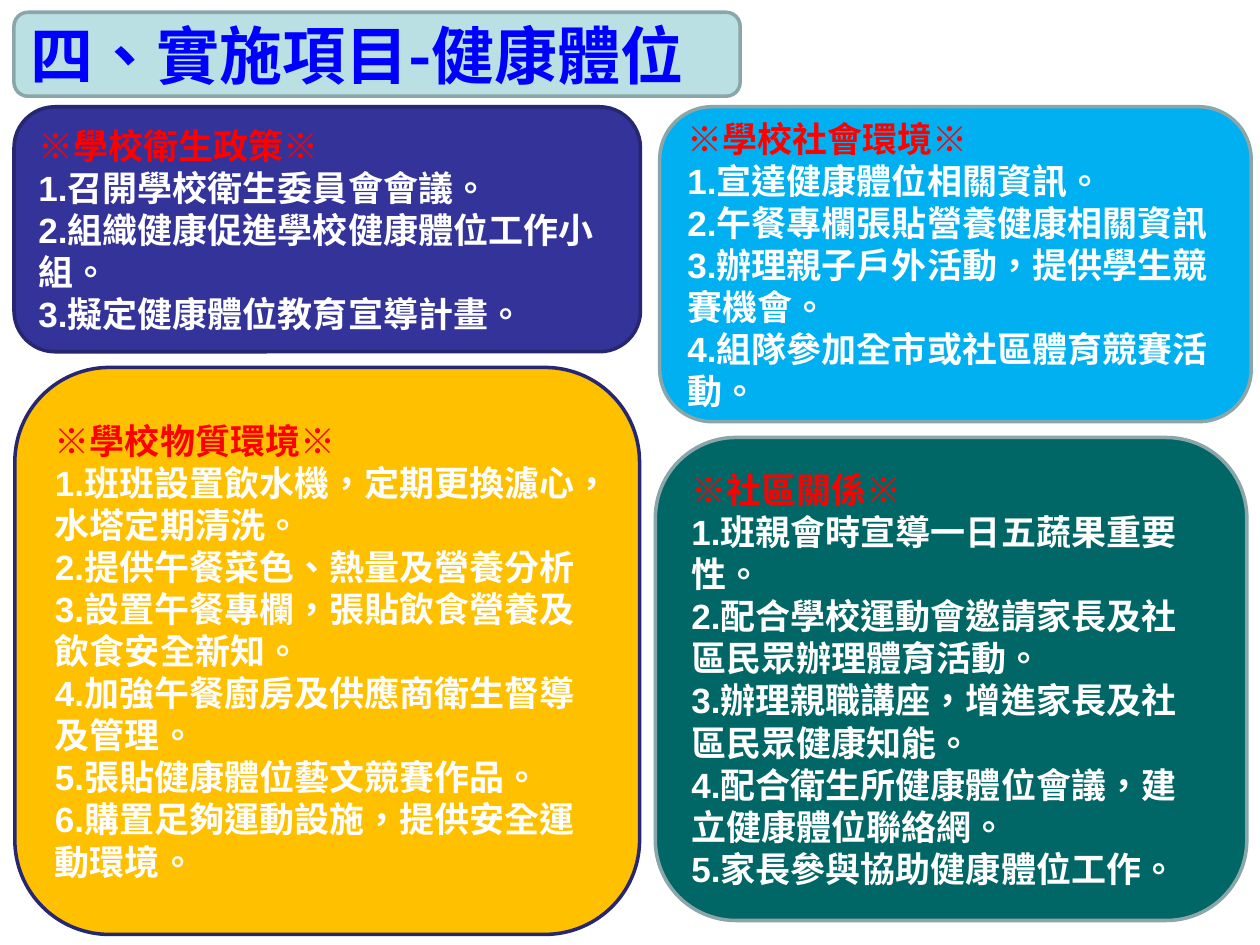
from lxml import etree
from pptx import Presentation
from pptx.dml.color import RGBColor
from pptx.enum import lang, shapes, text
from pptx.oxml import ns
from pptx.util import Pt

COLORS = {
    "title_fill": "BBE0E3", "title_text": "0000FF",
    "policy": "333399", "material": "FFC000",
    "social": "00B0F0", "community": "006666",
    "gray_line": "8AA6A8", "navy_line": "262671",
    "heading": "FF0000", "body": "FFFFFF",
}
TITLE_FONT, MARK_FONT, BODY_FONT = "Noto Sans CJK SC", "Noto Sans CJK TC", "Arial"

# Box in points, fill, line, heading, items
PANELS = [
    ((8, 61, 358, 140), "policy", "navy_line", "學校衛生政策", [
        "召開學校衛生委員會會議。",
        "組織健康促進學校健康體位工作小組。",
        "擬定健康體位教育宣導計畫。"]),
    ((8.5, 210, 357, 324), "material", "navy_line", "學校物質環境", [
        "班班設置飲水機，定期更換濾心，水塔定期清洗。",
        "提供午餐菜色、熱量及營養分析",
        "設置午餐專欄，張貼飲食營養及飲食安全新知。",
        "加強午餐廚房及供應商衛生督導及管理。",
        "張貼健康體位藝文競賽作品。",
        "購置足夠運動設施，提供安全運動環境。"]),
    ((377, 61, 338, 180), "social", "gray_line", "學校社會環境", [
        "宣達健康體位相關資訊。",
        "午餐專欄張貼營養健康相關資訊",
        "辦理親子戶外活動，提供學生競賽機會。",
        "組隊參加全市或社區體育競賽活動。"]),
    ((374.5, 250, 338, 276), "community", "gray_line", "社區關係", [
        "班親會時宣導一日五蔬果重要性。",
        "配合學校運動會邀請家長及社區民眾辦理體育活動。",
        "辦理親職講座，增進家長及社區民眾健康知能。",
        "配合衛生所健康體位會議，建立健康體位聯絡網。",
        "家長參與協助健康體位工作。"]),
]


def rgb(name):
    return RGBColor.from_string(COLORS[name])


def add_box(slide, box, fill, line):
    sp = slide.shapes.add_shape(shapes.MSO_SHAPE.ROUNDED_RECTANGLE, *map(Pt, box))
    sp.shadow.inherit = False
    sp.fill.solid()
    sp.fill.fore_color.rgb = rgb(fill)
    sp.line.color.rgb = rgb(line)
    sp.line.width = Pt(2)
    tf = sp.text_frame
    tf.word_wrap = True
    tf.vertical_anchor = text.MSO_ANCHOR.MIDDLE
    return tf


def add_run(p, words, size, color, font):
    r = p.add_run()
    r.text = words
    r.font.size = Pt(size)
    r.font.bold = True
    r.font.name = font
    r.font.color.rgb = rgb(color)
    r.font.language_id = lang.MSO_LANGUAGE_ID.TRADITIONAL_CHINESE
    if font != BODY_FONT:  # East Asian typeface
        etree.SubElement(r.font._element, ns.qn("a:ea"), typeface=font)


def add_title(slide, box):
    p = add_box(slide, box, "title_fill", "gray_line").paragraphs[0]
    p.alignment = text.PP_ALIGN.LEFT
    add_run(p, "四、實施項目-健康體位", 36, "title_text", TITLE_FONT)


def add_panel(slide, box, fill, line, heading, items):
    tf = add_box(slide, box, fill, line)
    # Heading between reference marks
    p = tf.paragraphs[0]
    for words, font in (("※", MARK_FONT), (heading, BODY_FONT), ("※", MARK_FONT)):
        add_run(p, words, 20, "heading", font)
    # Numbered items
    for number, item in enumerate(items, 1):
        add_run(tf.add_paragraph(), f"{number}.{item}", 20, "body", BODY_FONT)
    for p in tf.paragraphs:
        p.alignment = text.PP_ALIGN.LEFT
        p.line_spacing = Pt(24)


def main():
    prs = Presentation()
    prs.slide_width, prs.slide_height = Pt(720), Pt(540)
    slide = prs.slides.add_slide(prs.slide_layouts[6])
    add_title(slide, (8, 7, 415, 48))
    for panel in PANELS:
        add_panel(slide, *panel)
    prs.save("out.pptx")


if __name__ == "__main__":
    main()
